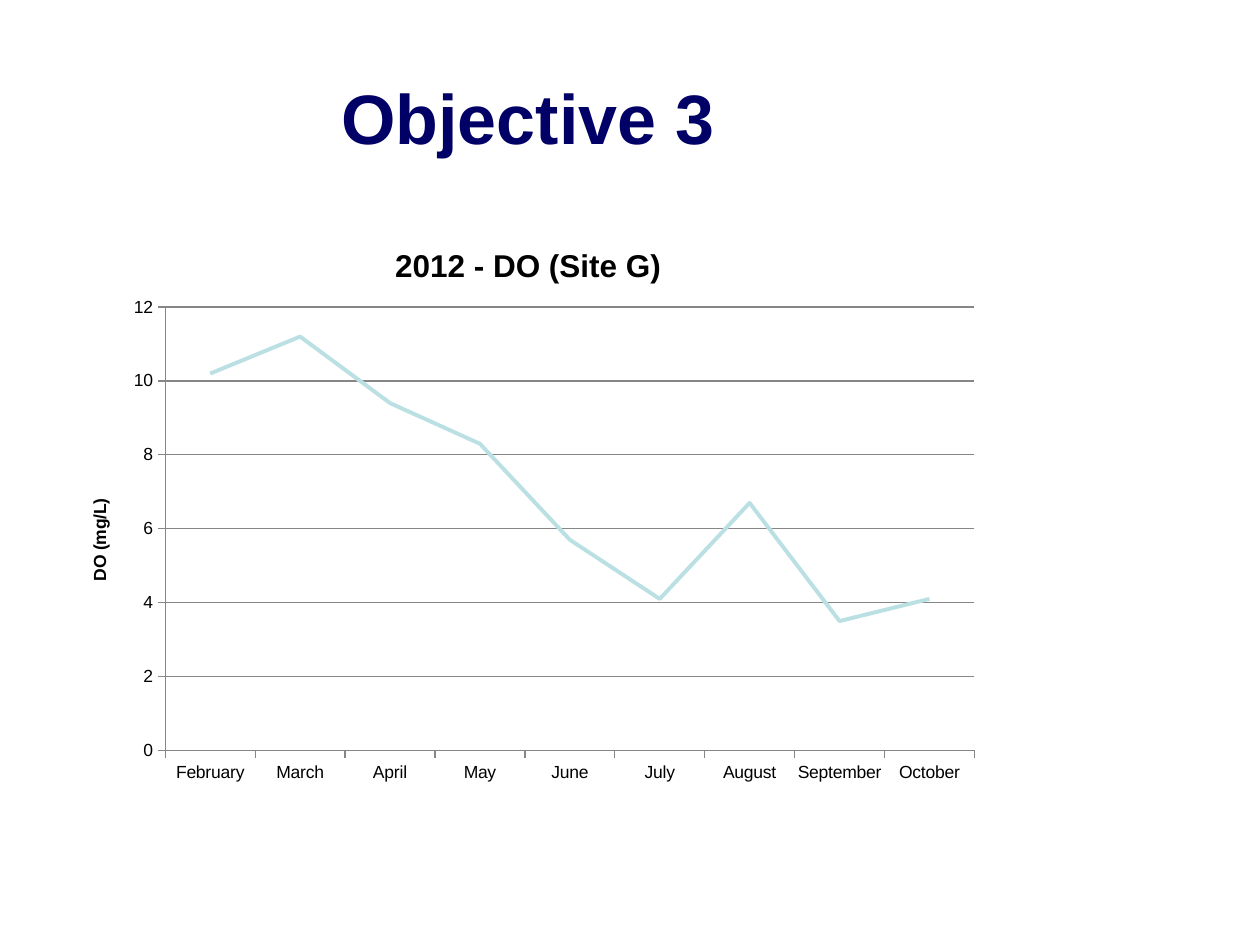
"""Build the Objective 3 slide with a line chart of dissolved oxygen at Site G."""
from pptx import Presentation
from pptx import util as u
from pptx.chart.data import CategoryChartData
from pptx.dml.color import RGBColor
from pptx.enum import chart as ch, text
from pptx.oxml import parse_xml
from pptx.oxml.ns import nsdecls, qn

COLORS = {"title": "000066", "text": "000000", "line": "BBE0E3", "axis": "868686", "background": "FFFFFF"}
DO_LEVELS = {
    "February": 10.2, "March": 11.2, "April": 9.4, "May": 8.3, "June": 5.7,
    "July": 4.1, "August": 6.7, "September": 3.5, "October": 4.1,
}
PLOT_AREA = {"x": 0.11, "y": 0.15, "w": 0.87, "h": 0.77}
LEFT, WIDTH = u.Cm(1.27), u.Cm(18.75)


def write(tf, words, size, color="text", bold=True):
    tf.text = words
    p = tf.paragraphs[0]
    p.alignment = text.PP_ALIGN.CENTER
    font = p.runs[0].font
    font.name, font.size, font.bold = "Arial", u.Pt(size), bold
    font.color.rgb = RGBColor.from_string(COLORS[color])


def set_line(line, color, width):
    line.color.rgb = RGBColor.from_string(COLORS[color])
    line.width = u.Pt(width)


prs = Presentation()
prs.slide_width, prs.slide_height = u.Cm(25.4), u.Cm(19.05)
s = prs.slides.add_slide(prs.slide_layouts[5])
s.background.fill.solid()
s.background.fill.fore_color.rgb = RGBColor.from_string(COLORS["background"])

title = s.shapes.title
title.left, title.top, title.width, title.height = LEFT, u.Cm(0.76), WIDTH, u.Cm(3.18)
title.text_frame.vertical_anchor = text.MSO_ANCHOR.MIDDLE
write(title.text_frame, "Objective 3", 40, "title")

data = CategoryChartData(number_format="General")
data.categories = list(DO_LEVELS)
data.add_series("Series 1", list(DO_LEVELS.values()))
chart = s.shapes.add_chart(ch.XL_CHART_TYPE.LINE, LEFT, u.Cm(4.45), WIDTH, u.Cm(11.61), data).chart
chart.has_legend = False
chart.font.name, chart.font.size = "Arial", u.Pt(10)
chart.font.color.rgb = RGBColor.from_string(COLORS["text"])
chart.has_title = True
write(chart.chart_title.text_frame, "2012 - DO (Site G)", 18)
chart.chart_title.include_in_layout = False

plot = chart.plots[0]
plot.vary_by_categories = False
series = plot.series[0]
series.smooth = False
series.marker.style = ch.XL_MARKER_STYLE.NONE
set_line(series.format.line, "line", 2.25)

for axis in (chart.category_axis, chart.value_axis):
    axis.major_tick_mark = ch.XL_TICK_MARK.OUTSIDE
    axis.minor_tick_mark = ch.XL_TICK_MARK.NONE
    set_line(axis.format.line, "axis", 0.75)

value_axis = chart.value_axis
value_axis.minimum_scale, value_axis.maximum_scale, value_axis.major_unit = 0, 12, 2
value_axis.has_major_gridlines = True
set_line(value_axis.major_gridlines.format.line, "axis", 0.75)
value_axis.has_title = True
write(value_axis.axis_title.text_frame, "DO (mg/L)", 10)

plot_area = chart._chartSpace.chart.plotArea
for layout in plot_area.findall(qn("c:layout")):
    plot_area.remove(layout)
modes = "".join(f'<c:{side}Mode val="edge"/>' for side in "xy")
sizes = "".join(f'<c:{side} val="{share}"/>' for side, share in PLOT_AREA.items())
plot_area.insert(0, parse_xml(
    f'<c:layout {nsdecls("c")}><c:manualLayout><c:layoutTarget val="inner"/>'
    f'{modes}{sizes}</c:manualLayout></c:layout>'))

prs.save("out.pptx")
